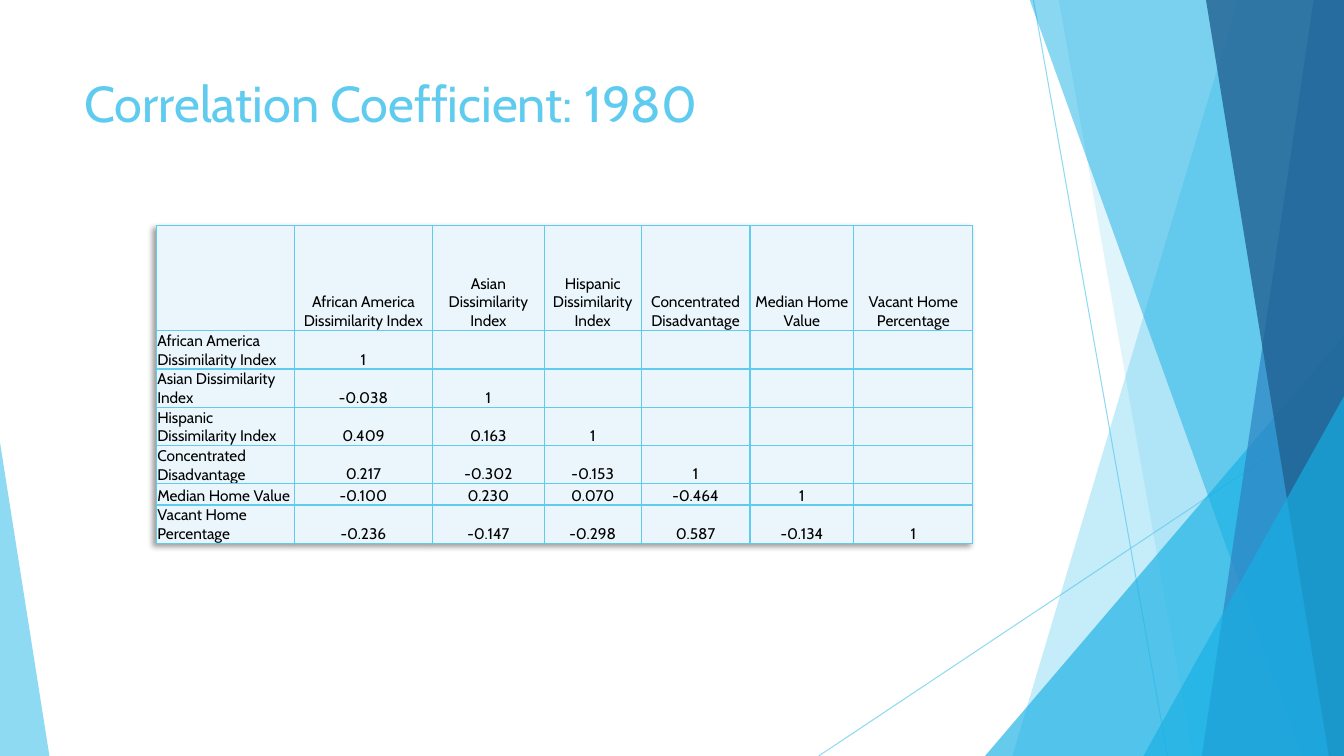
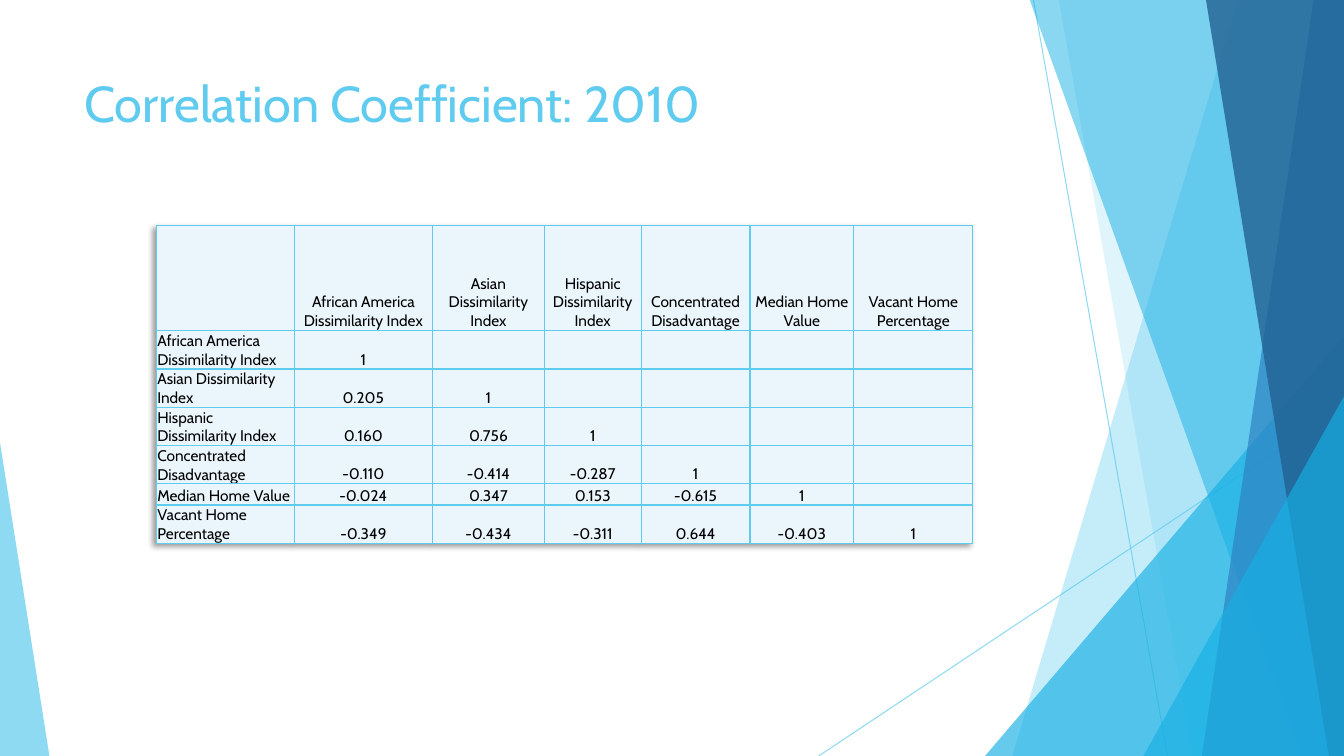
from dataclasses import dataclass

from lxml.etree import SubElement
from pptx import Presentation
from pptx.dml.color import RGBColor
from pptx.enum.shapes import MSO_CONNECTOR, MSO_SHAPE
from pptx.enum.text import MSO_ANCHOR, PP_ALIGN
from pptx.oxml import parse_xml
from pptx.oxml.ns import nsdecls, qn
from pptx.util import Pt

PX = 9144
WIDTH, HEIGHT = 1333, 750

VARIABLES = [
    "African America Dissimilarity Index",
    "Asian Dissimilarity Index",
    "Hispanic Dissimilarity Index",
    "Concentrated Disadvantage",
    "Median Home Value",
    "Vacant Home Percentage",
]
COLUMN_WIDTHS = [137, 137, 111, 96, 108, 103, 118]
ROW_HEIGHTS = [104, 38, 38, 38, 38, 21, 38]

CORRELATIONS = {
    1980: [
        [],
        [-0.038],
        [0.409, 0.163],
        [0.217, -0.302, -0.153],
        [-0.100, 0.230, 0.070, -0.464],
        [-0.236, -0.147, -0.298, 0.587, -0.134],
    ],
    2010: [
        [],
        [0.205],
        [0.160, 0.756],
        [-0.110, -0.414, -0.287],
        [-0.024, 0.347, 0.153, -0.615],
        [-0.349, -0.434, -0.311, 0.644, -0.403],
    ],
}


@dataclass(frozen=True)
class Theme:
    """Colours, font and type sizes of the deck."""

    font: str = "Cabin"
    sky: str = "5FCBEF"
    azure: str = "17B0E4"
    blue: str = "2E83C3"
    navy: str = "226292"
    cell: str = "EAF6FC"
    ink: str = "000000"
    title_size: int = 36
    table_size: int = 11
    hairline: float = 0.75
    border: int = 1


class Deck:
    """Builds slides in one theme and keeps the current slide."""

    def __init__(self, theme):
        """Start an empty wide presentation."""
        self.theme = theme
        self.presentation = Presentation()
        self.presentation.slide_width = WIDTH * PX
        self.presentation.slide_height = HEIGHT * PX
        self.slide = None

    def new_slide(self, title):
        """Add a slide with the shared backdrop and a title."""
        self.slide = self.presentation.slides.add_slide(self.presentation.slide_layouts[6])
        self.backdrop()
        self.title(title)

    def backdrop(self):
        """Draw the layered facets at the slide edges."""
        theme = self.theme
        self.line(1025, 0, 1158, HEIGHT)
        self.line(WIDTH, 403, 812, HEIGHT)
        self.facet(1228, 1004, theme.sky, 36)
        self.facet(1050, 1183, theme.sky, 20)
        self.triangle(977, 333, 356, 1, theme.azure, 66)
        self.facet(1021, 1291, theme.azure, 50)
        self.facet(1303, 1192, theme.blue, 70)
        self.facet(1196, 1318, theme.navy, 80)
        self.triangle(1134, 393, 199, 1, theme.azure, 66)
        self.triangle(0, 439, 49, 0, theme.sky, 70)

    def set_opacity(self, shape, percent):
        """Make the colours of a shape partly transparent."""
        for color in shape._element.iter(qn("a:srgbClr")):
            SubElement(color, qn("a:alpha"), val=str(percent * 1000))

    def paint(self, shape, color, opacity):
        """Give a shape a plain translucent fill."""
        shape.shadow.inherit = False
        shape.line.fill.background()
        shape.fill.solid()
        shape.fill.fore_color.rgb = RGBColor.from_string(color)
        self.set_opacity(shape, opacity)

    def line(self, start_x, start_y, end_x, end_y):
        """Draw a translucent hairline."""
        ends = [value * PX for value in (start_x, start_y, end_x, end_y)]
        line = self.slide.shapes.add_connector(MSO_CONNECTOR.STRAIGHT, *ends)
        line.line.width = Pt(self.theme.hairline)
        line.line.color.rgb = RGBColor.from_string(self.theme.sky)
        self.set_opacity(line, 70)
        SubElement(line._element.spPr, qn("a:effectLst"))

    def facet(self, top_x, bottom_x, color, opacity):
        """Fill from a slanted edge to the right side of the slide."""
        builder = self.slide.shapes.build_freeform(top_x, -1, scale=PX)
        builder.add_line_segments([(WIDTH, -1), (WIDTH, HEIGHT), (bottom_x, HEIGHT)], close=True)
        self.paint(builder.convert_to_shape(), color, opacity)

    def triangle(self, left, top, width, apex, color, opacity):
        """Draw a right triangle standing on the bottom edge."""
        triangle = self.slide.shapes.add_shape(
            MSO_SHAPE.ISOSCELES_TRIANGLE, left * PX, top * PX, width * PX, (HEIGHT - top) * PX
        )
        triangle.adjustments[0] = apex
        self.paint(triangle, color, opacity)

    def style_text(self, paragraph, size, color):
        """Format the runs of a paragraph."""
        for span in paragraph.runs:
            span.font.name = self.theme.font
            span.font.size = Pt(size)
            span.font.color.rgb = RGBColor.from_string(color)

    def title(self, text):
        """Write the slide title."""
        box = self.slide.shapes.add_textbox(74 * PX, 67 * PX, 940 * PX, 144 * PX)
        box.text_frame.word_wrap = True
        box.text_frame.text = text
        self.style_text(box.text_frame.paragraphs[0], self.theme.title_size, self.theme.sky)

    def table(self, left, top, rows):
        """Place a bordered table with a soft shadow."""
        frame = self.slide.shapes.add_table(
            len(rows), len(rows[0]), left * PX, top * PX,
            sum(COLUMN_WIDTHS) * PX, sum(ROW_HEIGHTS) * PX,
        )
        table = frame.table
        table.first_row = table.horz_banding = False
        table._tbl.tblPr.insert(0, parse_xml(
            f'<a:effectLst {nsdecls("a")}>'
            '<a:outerShdw blurRad="50800" dist="38100" dir="8100000" algn="tr" rotWithShape="0">'
            '<a:prstClr val="black"><a:alpha val="40000"/></a:prstClr>'
            '</a:outerShdw></a:effectLst>'
        ))
        for column, width in zip(table.columns, COLUMN_WIDTHS):
            column.width = width * PX
        for row, height, texts in zip(table.rows, ROW_HEIGHTS, rows):
            row.height = height * PX
            for index, (cell, text) in enumerate(zip(row.cells, texts)):
                self.cell(cell, text, PP_ALIGN.CENTER if index else PP_ALIGN.LEFT)

    def cell(self, cell, text, alignment):
        """Fill, frame and write one table cell."""
        theme = self.theme
        cell.margin_left = cell.margin_right = cell.margin_top = PX
        cell.margin_bottom = 0
        cell.vertical_anchor = MSO_ANCHOR.BOTTOM
        cell.fill.solid()
        cell.fill.fore_color.rgb = RGBColor.from_string(theme.cell)
        for position, side in enumerate(("lnL", "lnR", "lnT", "lnB")):
            cell._tc.tcPr.insert(position, parse_xml(
                f'<a:{side} {nsdecls("a")} w="{Pt(theme.border)}"><a:solidFill>'
                f'<a:srgbClr val="{theme.sky}"/></a:solidFill></a:{side}>'
            ))
        paragraph = cell.text_frame.paragraphs[0]
        paragraph.alignment = alignment
        if text:
            paragraph.text = text
            self.style_text(paragraph, theme.table_size, theme.ink)
        else:
            SubElement(paragraph._p, qn("a:endParaRPr"), sz=str(theme.table_size * 100))


def correlation_rows(triangle):
    """Turn a lower triangle of coefficients into table text."""
    rows = [["", *VARIABLES]]
    for name, values in zip(VARIABLES, triangle):
        blanks = [""] * (len(VARIABLES) - len(values) - 1)
        rows.append([name, *(f"{value:.3f}" for value in values), "1", *blanks])
    return rows


def main():
    """Build and save the deck."""
    deck = Deck(Theme())
    for year, triangle in CORRELATIONS.items():
        deck.new_slide(f"Correlation Coefficient: {year}")
        deck.table(155, 224, correlation_rows(triangle))
    deck.presentation.save("out.pptx")


if __name__ == "__main__":
    main()
